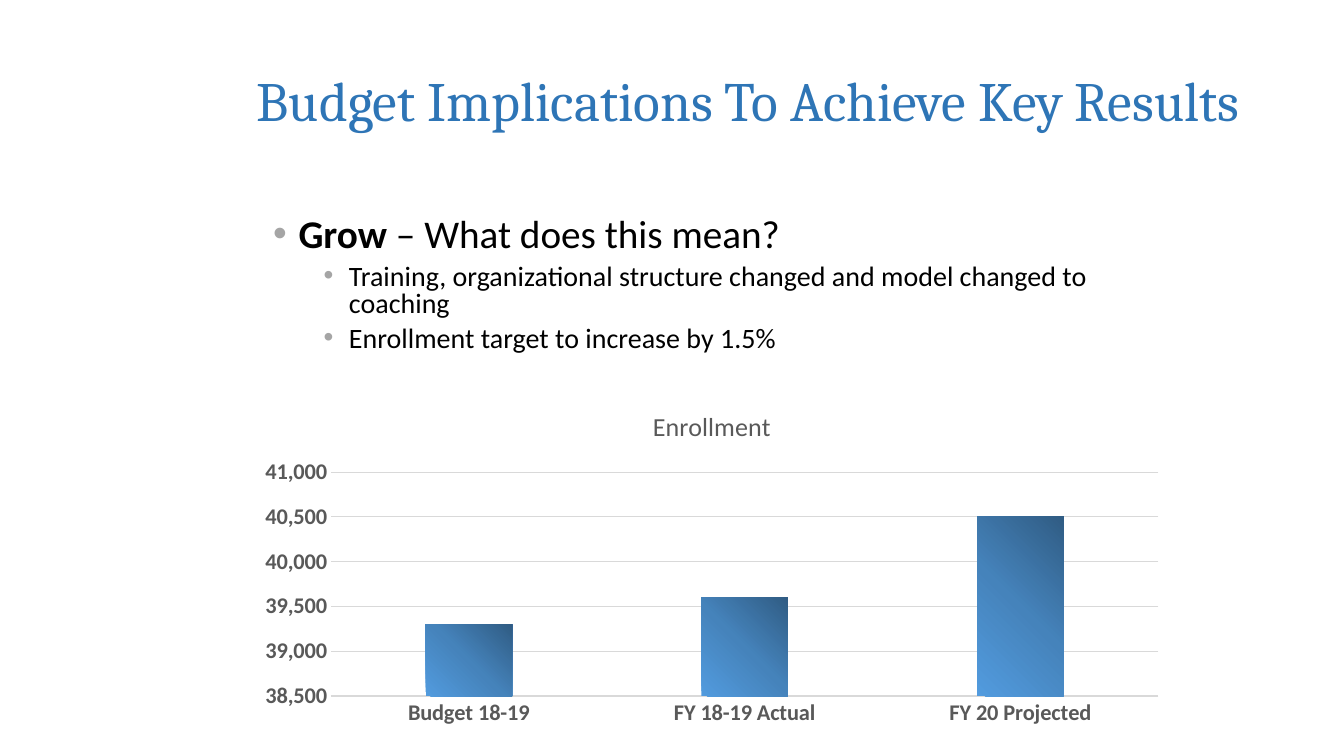
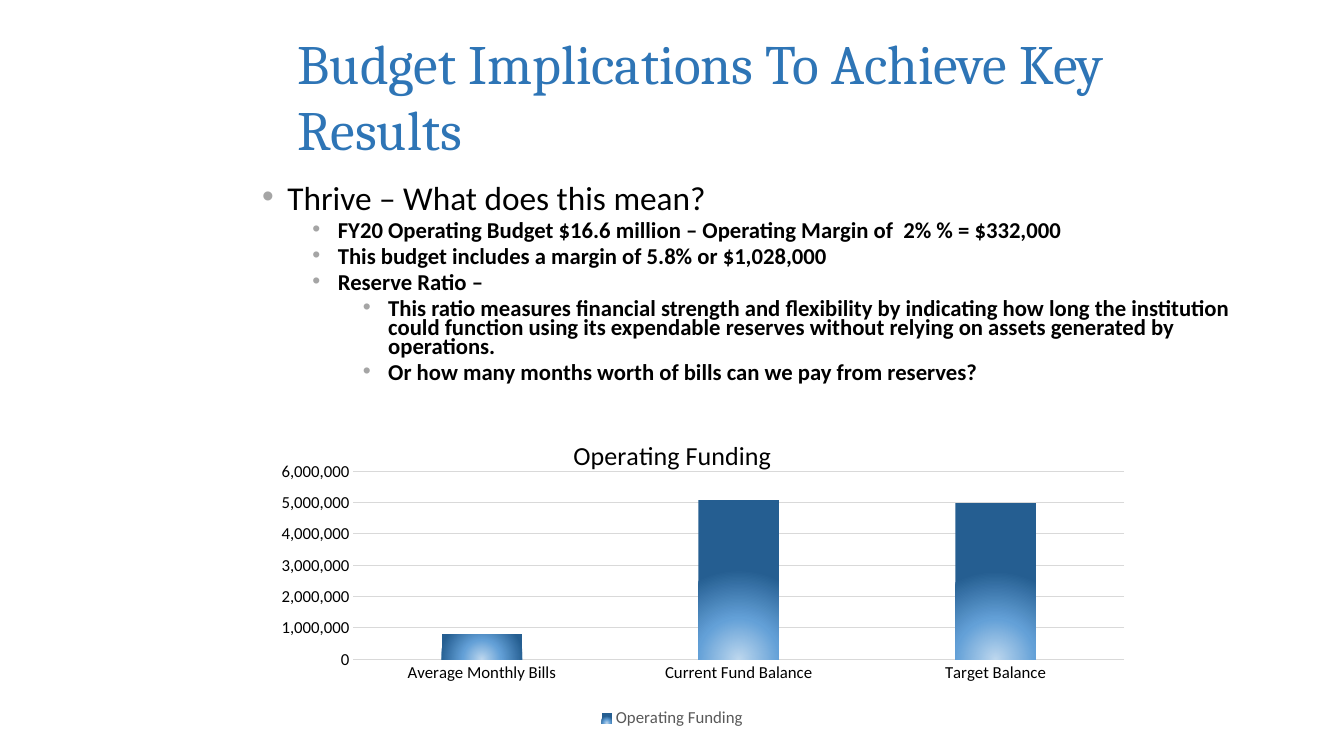
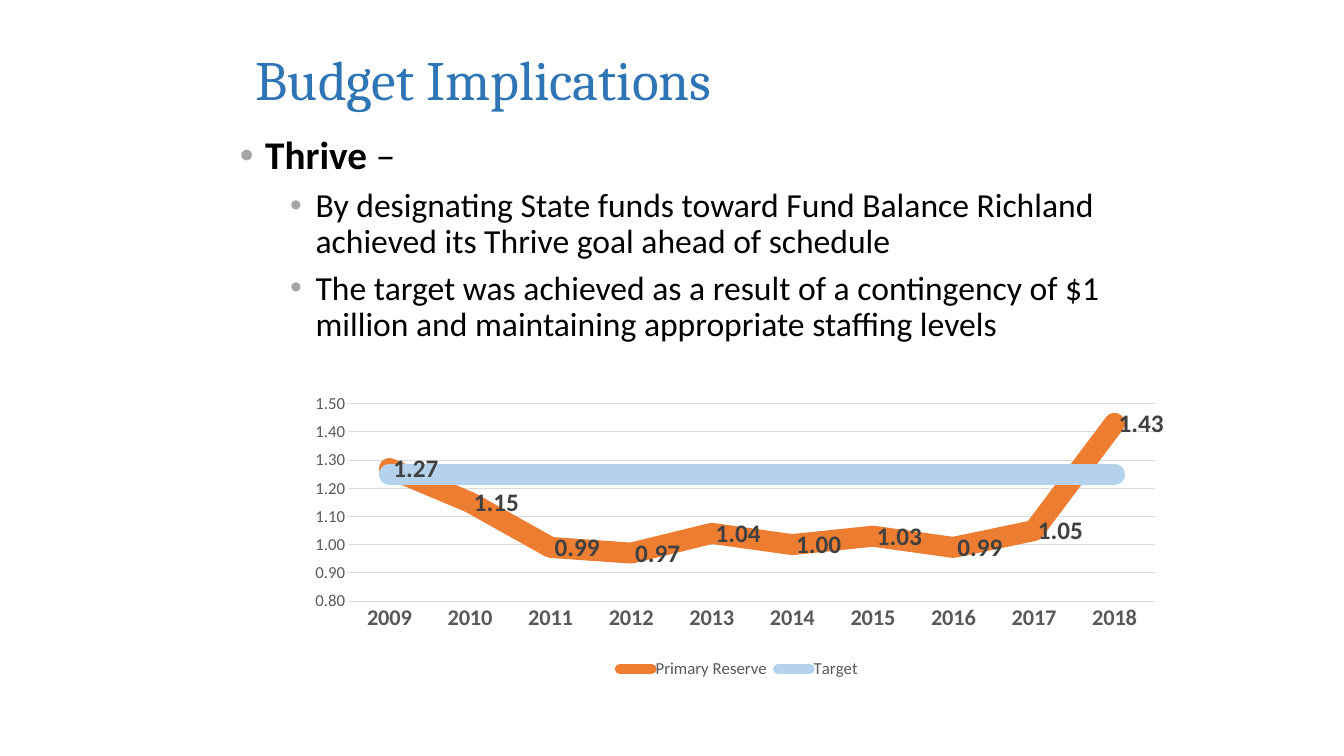
"""Build three slides on budget implications, each with a bullet list and a chart."""

from pptx import Presentation
from pptx.chart.data import CategoryChartData
from pptx.dml.color import RGBColor
from pptx.enum.chart import XL_CHART_TYPE as ChartType
from pptx.enum.chart import XL_LABEL_POSITION as LabelPosition
from pptx.enum.chart import XL_LEGEND_POSITION as LegendPosition
from pptx.enum.chart import XL_MARKER_STYLE as MarkerStyle
from pptx.enum.chart import XL_TICK_MARK as TickMark
from pptx.enum.text import MSO_ANCHOR as Anchor
from pptx.enum.text import MSO_AUTO_SIZE as AutoSize
from pptx.enum.text import PP_ALIGN as Align
from pptx.oxml import parse_xml
from pptx.oxml.ns import nsdecls
from pptx.util import Cm, Pt

TITLE_COLOR, BLACK, GRAY, RULE, BULLET = "2E75B6", "000000", "595959", "D9D9D9", "A5A5A5"
BODY_FONT, TITLE_FONT = "Calibri", "Cambria"


def rgb(value):
    return RGBColor.from_string(value)


def set_font(font, size, color, bold=False, name=BODY_FONT):
    font.size, font.bold, font.name = Pt(size), bold, name
    font.color.rgb = rgb(color)


SLIDES = [
    {
        "title": "Budget Implications To Achieve Key Results",
        "title_box": (6.22, 1.04, 25.83, 2.92),
        "body_box": (6.63, 5.38, 23.27, 3.94),
        "line_spacing": 0.8,
        "bullets": [
            (0, 28, [("Grow", True), (" – What does this mean?", False)]),
            (1, 20, [("Training, organizational structure changed and model changed to coaching", False)]),
            (1, 20, [("Enrollment target to increase by 1.5%", False)]),
        ],
        "chart_box": (6.22, 9.86, 23.44, 8.64),
        "chart_type": ChartType.COLUMN_CLUSTERED,
        "categories": ["Budget 18-19", "FY 18-19 Actual", "FY 20 Projected"],
        "series": [("Enrollment", [39300, 39600, 40500])],
        "chart_title": GRAY,
        "category_font": (16, GRAY, True),
        "value_font": (16, GRAY, True),
        "scale": (38500, 41000, 500, "#,##0"),
        "gradient": ([(0, "305C84"), (50, "4583BB"), (100, "529BDE")], (100, 0, 0, 100)),
        "legend": False,
        "plot": None,
    },
    {
        "title": "Budget Implications To Achieve Key Results",
        "title_box": (7.25, 0.66, 24.64, 3.48),
        "body_box": (6.35, 4.62, 24.97, 5.51),
        "line_spacing": 0.7,
        "bullets": [
            (0, 23.8, [("Thrive – What does this mean?", False)]),
            (1, 16.2, [("FY20 Operating Budget $16.6 million – Operating Margin of  2% % = $332,000", True)]),
            (1, 16.2, [("This budget includes a margin of 5.8% or $1,028,000", True)]),
            (1, 16.2, [("Reserve Ratio –", True)]),
            (2, 16.2, [("This ratio measures financial strength and flexibility by indicating how long "
                        "the institution could function using its expendable reserves without relying "
                        "on assets generated by operations.", True)]),
            (2, 16.2, [("Or how many months worth of bills can we pay from reserves?", True)]),
        ],
        "chart_box": (5.56, 10.6, 22.78, 7.85),
        "chart_type": ChartType.COLUMN_CLUSTERED,
        "categories": ["Average Monthly Bills", "Current Fund Balance", "Target Balance"],
        "series": [("Operating Funding", [800000, 5100000, 5000000])],
        "chart_title": BLACK,
        "category_font": (12, BLACK, False),
        "value_font": (12, BLACK, False),
        "scale": (0, 6000000, 1000000, "#,##0"),
        "gradient": ([(0, "BDD7EE"), (46, "63A0D7"), (100, "255E91")], (50, 130, 50, -30)),
        "legend": True,
        "plot": (0.147, 0.163, 0.853, 0.603),
    },
    {
        "title": "Budget Implications",
        "title_box": (6.19, 0.94, 12.98, 2.06),
        "body_box": (5.79, 3.3, 23.88, 10.77),
        "line_spacing": 0.9,
        "bullets": [
            (0, 28, [("Thrive", True), (" –", False)]),
            (1, 24, [("By designating State funds toward Fund Balance Richland achieved its "
                      "Thrive goal ahead of schedule", False)]),
            (1, 24, [("The target was achieved as a result of a contingency of $1 million and "
                      "maintaining appropriate staffing levels", False)]),
        ],
        "chart_box": (7.56, 9.92, 22.12, 7.29),
        "chart_type": ChartType.LINE,
        "categories": [str(year) for year in range(2009, 2019)],
        "series": [
            ("Primary Reserve", [1.27, 1.15, 0.99, 0.97, 1.04, 1.00, 1.03, 0.99, 1.05, 1.43]),
            ("Target", [1.25] * 10),
        ],
        "chart_title": None,
        "category_font": (16, GRAY, True),
        "value_font": (12, GRAY, False),
        "scale": (0.8, 1.5, 0.1, "0.00"),
        "line_colors": ["ED7D31", "B4D2EC"],
        "legend": True,
        "plot": (0.056, 0.034, 0.918, 0.683),
    },
]

presentation = Presentation()
presentation.slide_width, presentation.slide_height = Cm(33.87), Cm(19.05)

for content in SLIDES:
    slide = presentation.slides.add_slide(presentation.slide_layouts[1])
    title, body = slide.shapes.title, slide.placeholders[1]
    for shape, box in ((title, content["title_box"]), (body, content["body_box"])):
        shape.left, shape.top, shape.width, shape.height = [Cm(length) for length in box]
        shape.text_frame.word_wrap = True
        shape.text_frame.auto_size = AutoSize.NONE

    title.text_frame.vertical_anchor = Anchor.MIDDLE
    paragraph = title.text_frame.paragraphs[0]
    paragraph.alignment = Align.LEFT
    run = paragraph.add_run()
    run.text = content["title"]
    set_font(run.font, 39.6, TITLE_COLOR, name=TITLE_FONT)

    for index, (level, size, runs) in enumerate(content["bullets"]):
        paragraph = body.text_frame.add_paragraph() if index else body.text_frame.paragraphs[0]
        properties = paragraph._p.get_or_add_pPr()
        properties.set("marL", str(Cm(0.64 + 1.27 * level)))
        properties.set("indent", str(-Cm(0.64)))
        for bullet in (f'<a:buClr {nsdecls("a")}><a:srgbClr val="{BULLET}"/></a:buClr>',
                       f'<a:buFont {nsdecls("a")} typeface="Arial"/>',
                       f'<a:buChar {nsdecls("a")} char="•"/>'):
            properties.append(parse_xml(bullet))
        paragraph.level = level
        paragraph.line_spacing = content["line_spacing"]
        paragraph.space_before = Pt(round(0.3 * size, 1) if index else 0)
        for text, bold in runs:
            run = paragraph.add_run()
            run.text = text
            set_font(run.font, size, BLACK, bold)

    minimum, maximum, step, number_format = content["scale"]
    chart_data = CategoryChartData(number_format=number_format)
    chart_data.categories = content["categories"]
    for name, values in content["series"]:
        chart_data.add_series(name, values)
    chart_box = [Cm(length) for length in content["chart_box"]]
    chart = slide.shapes.add_chart(content["chart_type"], *chart_box, chart_data).chart
    set_font(chart.font, 10, BLACK)
    plot = chart.plots[0]
    plot.vary_by_categories = False

    chart.has_title = content["chart_title"] is not None
    if chart.has_title:
        run = chart.chart_title.text_frame.paragraphs[0].add_run()
        run.text = content["series"][0][0]
        set_font(run.font, 18.6, content["chart_title"])

    chart.has_legend = content["legend"]
    if chart.has_legend:
        chart.legend.position = LegendPosition.BOTTOM
        chart.legend.include_in_layout = False
        set_font(chart.legend.font, 12, GRAY)

    category_axis, value_axis = chart.category_axis, chart.value_axis
    for axis, font in ((category_axis, content["category_font"]), (value_axis, content["value_font"])):
        axis.major_tick_mark = axis.minor_tick_mark = TickMark.NONE
        set_font(axis.tick_labels.font, *font)
    value_axis.minimum_scale, value_axis.maximum_scale = minimum, maximum
    value_axis.major_unit = step
    value_axis.tick_labels.number_format = number_format
    value_axis.tick_labels.number_format_is_linked = False
    value_axis.format.line.fill.background()
    value_axis.has_major_gridlines = True
    for line in (category_axis.format.line, value_axis.major_gridlines.format.line):
        line.color.rgb, line.width = rgb(RULE), Pt(0.75)

    if content["plot"]:
        x, y, width, height = content["plot"]
        plot_area = chart._chartSpace.chart.plotArea
        for old_layout in plot_area.findall("{*}layout"):
            plot_area.remove(old_layout)
        plot_area.insert(0, parse_xml(
            f'<c:layout {nsdecls("c")}><c:manualLayout><c:layoutTarget val="inner"/>'
            f'<c:xMode val="edge"/><c:yMode val="edge"/><c:x val="{x}"/><c:y val="{y}"/>'
            f'<c:w val="{width}"/><c:h val="{height}"/></c:manualLayout></c:layout>'))

    if content["chart_type"] == ChartType.COLUMN_CLUSTERED:
        plot.gap_width, plot.overlap = 219, -27
        stops, (left, top, right, bottom) = content["gradient"]
        stop_xml = "".join(f'<a:gs pos="{position * 1000}"><a:srgbClr val="{color}"/></a:gs>'
                           for position, color in stops)
        plot.series[0].invert_if_negative = False
        plot.series[0]._element.get_or_add_spPr().append(parse_xml(
            f'<a:gradFill {nsdecls("a")}><a:gsLst>{stop_xml}</a:gsLst><a:path path="circle">'
            f'<a:fillToRect l="{left * 1000}" t="{top * 1000}" r="{right * 1000}" '
            f'b="{bottom * 1000}"/></a:path></a:gradFill>'))
    else:
        for series, color in zip(plot.series, content["line_colors"]):
            series.smooth = False
            series.marker.style = MarkerStyle.NONE
            series.format.line.color.rgb = rgb(color)
            series.format.line.width = Pt(15)
            outline = series._element.spPr.find("{*}ln")
            outline.set("cap", "rnd")
            outline.append(parse_xml(f'<a:round {nsdecls("a")}/>'))
        labels = plot.series[0].data_labels
        labels.show_value = True
        labels.position = LabelPosition.RIGHT
        labels.number_format, labels.number_format_is_linked = number_format, False
        set_font(labels.font, 18, "404040", True)

presentation.save("out.pptx")
